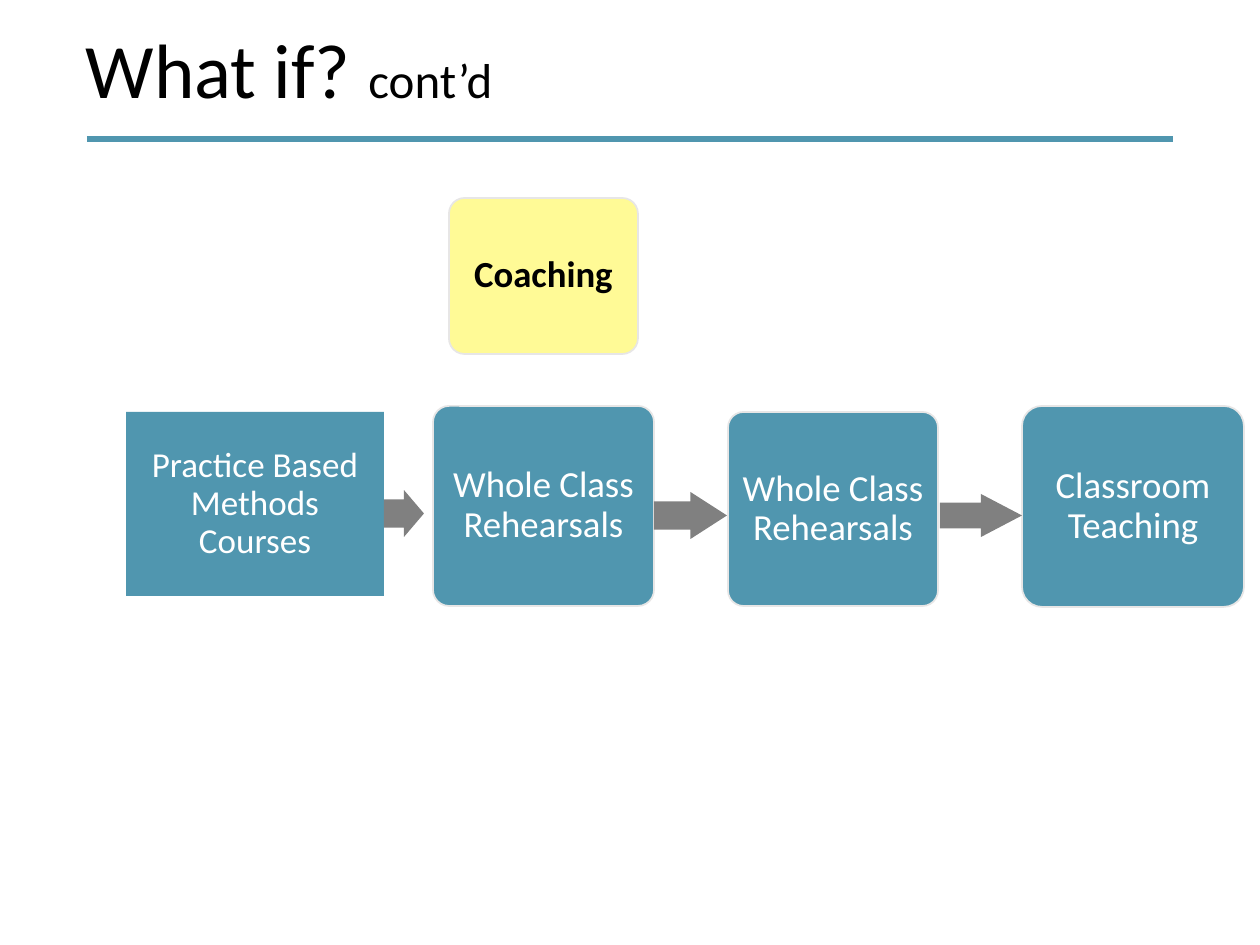
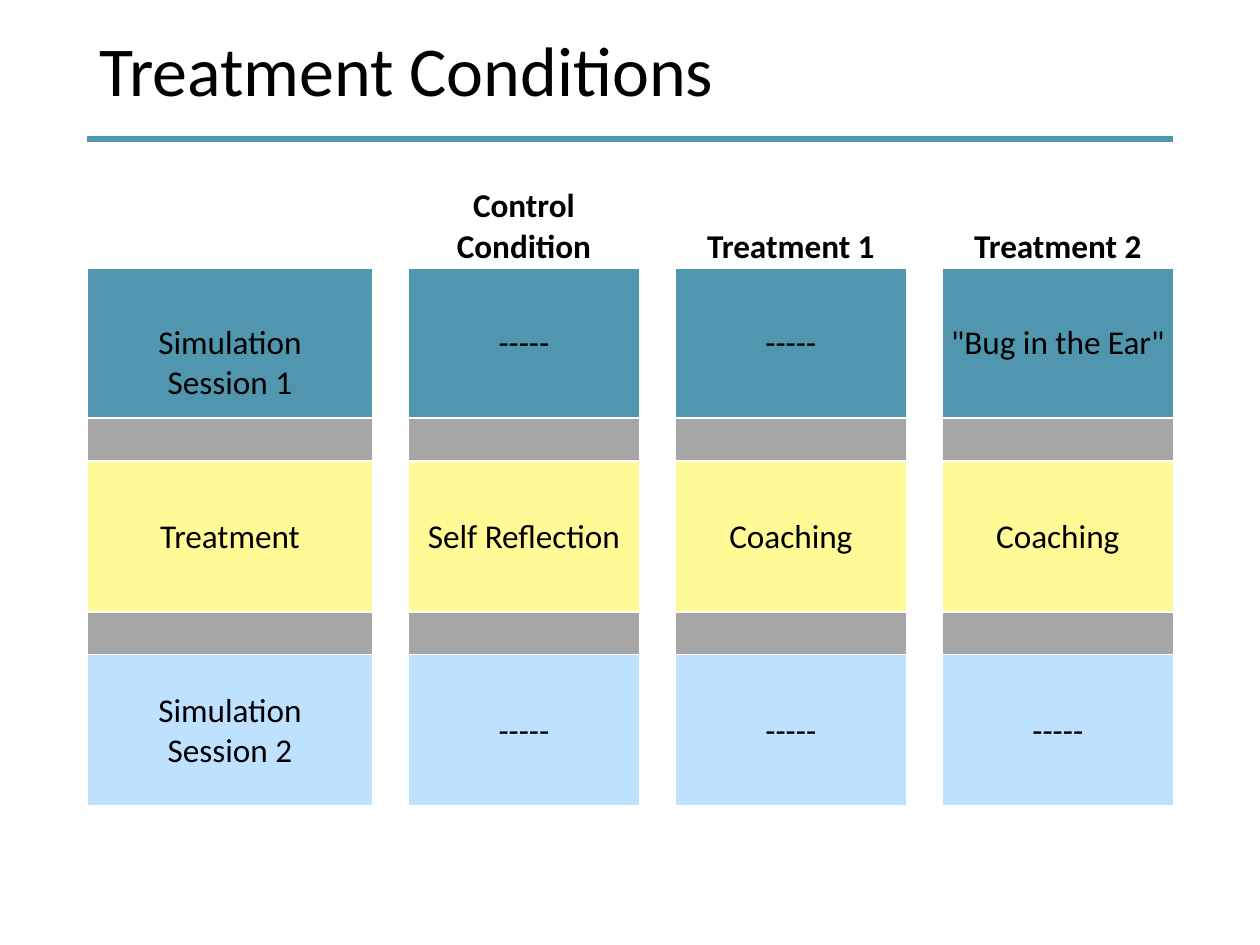
import pptx
import pptx.util
import pptx.dml.color
import pptx.enum.shapes
import pptx.enum.text
import pptx.oxml
import pptx.oxml.ns

SCALE = 914400 / 126
FONT = "Calibri"
TEAL, YELLOW, SKY = "5096AF", "FFFA96", "BEE1FF"
BLACK, WHITE = "000000", "FFFFFF"
ARROW_GRAY, BAND_GRAY, EDGE_GRAY = "808080", "A6A6A6", "E7E6E6"
SHAPE = pptx.enum.shapes.MSO_SHAPE
ALIGN = pptx.enum.text.PP_ALIGN
ANCHOR = pptx.enum.text.MSO_ANCHOR


def px(length):
    """Turn whole pixels into EMU."""
    return pptx.util.Emu(round(length * SCALE))


def color(value):
    """Turn a hex string into a colour."""
    return pptx.dml.color.RGBColor.from_string(value)


def apply(target, values):
    """Set each attribute of target from a dict."""
    for name, value in values.items():
        setattr(target, name, value)


def paint(target, value):
    """Give a shape or cell a solid fill."""
    target.fill.solid()
    target.fill.fore_color.rgb = color(value)


def margins(size):
    """Return equal text margins on all four sides."""
    return {f"margin_{side}": px(size) for side in ("left", "right", "top", "bottom")}


def add_span(para, text, size, ink=BLACK, bold=False):
    """Add a formatted run to a paragraph."""
    span = para.add_run()
    span.text = text
    apply(span.font, {"name": FONT, "size": pptx.util.Pt(size), "bold": bold})
    span.font.color.rgb = color(ink)


def add_page(deck, title_left, spans):
    """Add a slide with its title and the rule below it."""
    page = deck.slides.add_slide(deck.slide_layouts[5])
    rule = page.shapes.add_connector(
        pptx.enum.shapes.MSO_CONNECTOR.STRAIGHT, px(87), px(139), px(1173), px(139))
    rule.line.color.rgb = color(TEAL)
    rule.line.width = pptx.util.Pt(3.5)
    rule._element.spPr.append(pptx.oxml.parse_xml(
        f'<a:effectLst {pptx.oxml.ns.nsdecls("a")}/>'))
    title = page.shapes.title
    apply(title, {"left": px(title_left), "top": px(23),
                  "width": px(1086), "height": px(102)})
    apply(title.text_frame, {"vertical_anchor": ANCHOR.MIDDLE, "word_wrap": True,
                             "auto_size": pptx.enum.text.MSO_AUTO_SIZE.NONE})
    para = title.text_frame.paragraphs[0]
    apply(para, {"alignment": ALIGN.LEFT, "line_spacing": 0.9})
    for text, size in spans:
        add_span(para, text, size)
    return page


def add_shape(page, kind, place, fill, edge=None):
    """Add a flat filled shape, with a thin edge if one is named."""
    shape = page.shapes.add_shape(kind, *map(px, place))
    shape.shadow.inherit = False
    paint(shape, fill)
    if edge:
        shape.line.color.rgb = color(edge)
        shape.line.width = pptx.util.Pt(1)
    else:
        shape.line.fill.background()
    return shape


def add_box(page, text, place, fill=TEAL, ink=WHITE, size=21, bold=False, corner=0.1):
    """Add a labelled box, rounded unless corner is zero."""
    kind, edge = (SHAPE.ROUNDED_RECTANGLE, EDGE_GRAY) if corner else (SHAPE.RECTANGLE, None)
    box = add_shape(page, kind, place, fill, edge)
    if corner:
        box.adjustments[0] = corner
    frame = box.text_frame
    apply(frame, {"word_wrap": True, "vertical_anchor": ANCHOR.MIDDLE, **margins(9)})
    para = frame.paragraphs[0]
    apply(para, {"alignment": ALIGN.CENTER, "line_spacing": 0.9})
    add_span(para, text, size, ink, bold)


def add_arrow(page, left, top, width, height):
    """Add a block arrow whose head takes half its width."""
    arrow = add_shape(page, SHAPE.RIGHT_ARROW, (left, top, width, height), ARROW_GRAY)
    arrow.adjustments[0] = 0.6
    arrow.adjustments[1] = width / 2 / min(width, height)


def set_borders(cell, bottom):
    """Draw white borders round a cell, the lower one of a given width."""
    widths = {"lnL": 1, "lnR": 1, "lnT": 1, "lnB": bottom}
    for index, (tag, width) in enumerate(widths.items()):
        cell._tc.get_or_add_tcPr().insert(index, pptx.oxml.parse_xml(
            f'<a:{tag} {pptx.oxml.ns.nsdecls("a")} w="{width * 12700}"><a:solidFill>'
            f'<a:srgbClr val="{WHITE}"/></a:solidFill></a:{tag}>'))


def fill_cell(cell, text, fill, header):
    """Format one table cell and write its lines."""
    paint(cell, fill)
    set_borders(cell, 3 if header else 1)
    apply(cell, {**margins(2), "margin_bottom": 0,
                 "vertical_anchor": ANCHOR.BOTTOM if header else ANCHOR.MIDDLE})
    if not text:
        return
    frame = cell.text_frame
    for index, line in enumerate(text.split("\n")):
        para = frame.add_paragraph() if index else frame.paragraphs[0]
        para.alignment = ALIGN.CENTER
        add_span(para, line, 19, bold=header)


def add_conditions_table(page):
    """Add the conditions grid, with white gap columns between the data columns."""
    dash, empty = "-----", [""] * 4
    rows = [
        (94, WHITE, ["", "Control Condition", "Treatment 1", "Treatment 2"]),
        (151, TEAL, ["Simulation\nSession 1", dash, dash, '"Bug in the Ear"']),
        (43, BAND_GRAY, empty),
        (151, YELLOW, ["Treatment", "Self Reflection", "Coaching", "Coaching"]),
        (43, BAND_GRAY, empty),
        (151, SKY, ["Simulation\nSession 2", dash, dash, dash]),
    ]
    widths = [286] + [35, 232] * 3
    table = page.shapes.add_table(
        len(rows), len(widths), px(87), px(173),
        px(sum(widths)), px(sum(row[0] for row in rows))).table
    apply(table, {"first_row": False, "horz_banding": False})
    for column, width in zip(table.columns, widths):
        column.width = px(width)
    for r, (height, fill, texts) in enumerate(rows):
        table.rows[r].height = px(height)
        for c in range(len(widths)):
            gap = c % 2
            fill_cell(table.cell(r, c), "" if gap else texts[c // 2],
                      WHITE if gap else fill, header=r == 0)
    table.cell(1, 0).margin_top = px(42)


def build_what_if(deck):
    """Build the slide with the rehearsal sequence."""
    page = add_page(deck, 73, [("What if? ", 44), ("cont’d", 28)])
    add_box(page, "Coaching", (449, 198, 189, 156), YELLOW, BLACK, bold=True)
    add_box(page, "Practice Based Methods Courses", (126, 412, 258, 184), size=20, corner=0)
    add_box(page, "Whole Class Rehearsals", (433, 406, 221, 200), corner=0.08)
    add_box(page, "Whole Class Rehearsals", (728, 412, 210, 194), corner=0.08)
    add_box(page, "Classroom Teaching", (1022, 406, 222, 201))
    for place in [(384, 490, 40, 47), (654, 492, 73, 47), (940, 494, 82, 43)]:
        add_arrow(page, *place)


def build_conditions(deck):
    """Build the slide with the treatment conditions."""
    page = add_page(deck, 87, [("Treatment Conditions", 40)])
    add_conditions_table(page)


def main():
    """Build and save the deck."""
    deck = pptx.Presentation()
    apply(deck, {"slide_width": px(1260), "slide_height": px(945)})
    build_what_if(deck)
    build_conditions(deck)
    deck.save("out.pptx")


if __name__ == "__main__":
    main()
